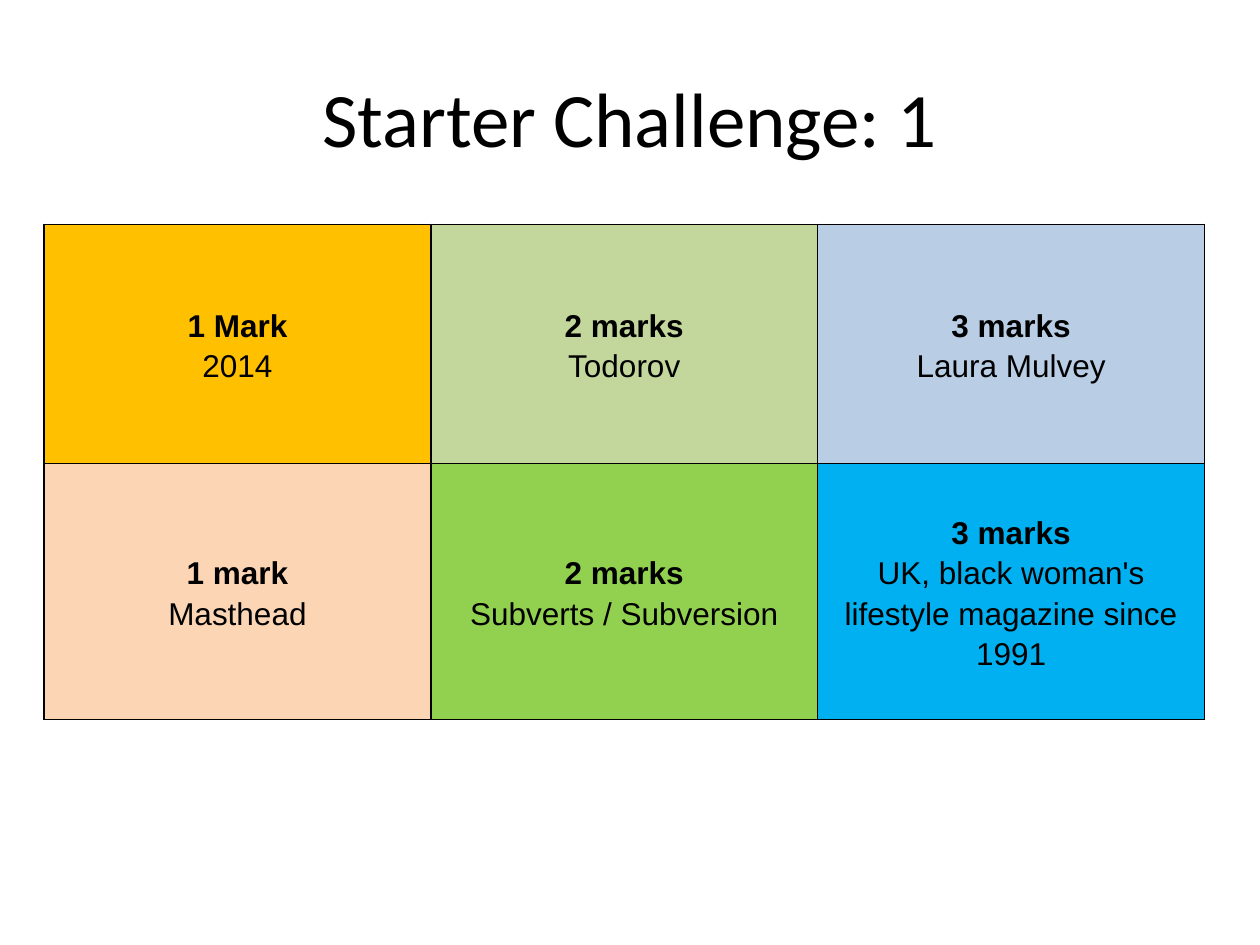
"""Build the starter challenge slide: a title above a grid of answers by marks."""
from lxml import etree
from pptx import Presentation
from pptx.dml.color import RGBColor
from pptx.enum import text
from pptx.oxml import ns
from pptx.util import Inches, Pt

TITLE = "Starter Challenge: 1"
ANSWERS = [
    [("1 Mark", "2014", "FFC000"),
     ("2 marks", "Todorov", "C3D69B"),
     ("3 marks", "Laura Mulvey", "B9CDE5")],
    [("1 mark", "Masthead", "FCD5B5"),
     ("2 marks", "Subverts / Subversion", "92D050"),
     ("3 marks", "UK, black woman's lifestyle magazine since 1991", "00B0F0")],
]
LEFT, TOP, COL_WIDTH = 0.35, 1.78, 3.07
ROW_HEIGHTS = [1.9, 2.03]


def rgb(value):
    return RGBColor.from_string(value)


def write(p, content, size=18, font="Arial", bold=False, color="000000", spacing=1.0):
    p.alignment = text.PP_ALIGN.CENTER
    p.line_spacing = spacing
    r = p.add_run()
    r.text = content
    r.font.size = Pt(size)
    r.font.name = font
    r.font.bold = bold
    r.font.color.rgb = rgb(color)


def add_borders(cell, color="000000", width=1):
    props = cell._tc.get_or_add_tcPr()
    for i, side in enumerate(("lnL", "lnR", "lnT", "lnB")):
        line = etree.Element(ns.qn(f"a:{side}"), w=str(Pt(width)))
        fill = etree.SubElement(line, ns.qn("a:solidFill"))
        etree.SubElement(fill, ns.qn("a:srgbClr"), val=color)
        props.insert(i, line)


def fill_cell(cell, marks, answer, color):
    cell.fill.solid()
    cell.fill.fore_color.rgb = rgb(color)
    add_borders(cell)
    cell.vertical_anchor = text.MSO_ANCHOR.MIDDLE
    cell.margin_left = cell.margin_right = Inches(0.07)
    cell.margin_top = cell.margin_bottom = 0
    tf = cell.text_frame
    write(tf.paragraphs[0], marks, bold=True, spacing=1.15)
    write(tf.add_paragraph(), answer, spacing=1.15)


def add_title(s):
    tf = s.shapes.add_textbox(Inches(0.5), Inches(0.3), Inches(9), Inches(1.25)).text_frame
    tf.word_wrap = True
    tf.vertical_anchor = text.MSO_ANCHOR.MIDDLE
    write(tf.paragraphs[0], TITLE, size=44, font="Calibri")


def add_answers(s):
    rows, cols = len(ANSWERS), len(ANSWERS[0])
    table = s.shapes.add_table(rows, cols, Inches(LEFT), Inches(TOP),
                               Inches(COL_WIDTH * cols), Inches(sum(ROW_HEIGHTS))).table
    for col in table.columns:
        col.width = Inches(COL_WIDTH)
    for i, (height, answers) in enumerate(zip(ROW_HEIGHTS, ANSWERS)):
        table.rows[i].height = Inches(height)
        for j, answer in enumerate(answers):
            fill_cell(table.cell(i, j), *answer)


def main():
    prs = Presentation()
    prs.slide_width, prs.slide_height = Inches(10), Inches(7.5)
    s = prs.slides.add_slide(prs.slide_layouts[6])
    add_title(s)
    add_answers(s)
    prs.save("out.pptx")


if __name__ == "__main__":
    main()
